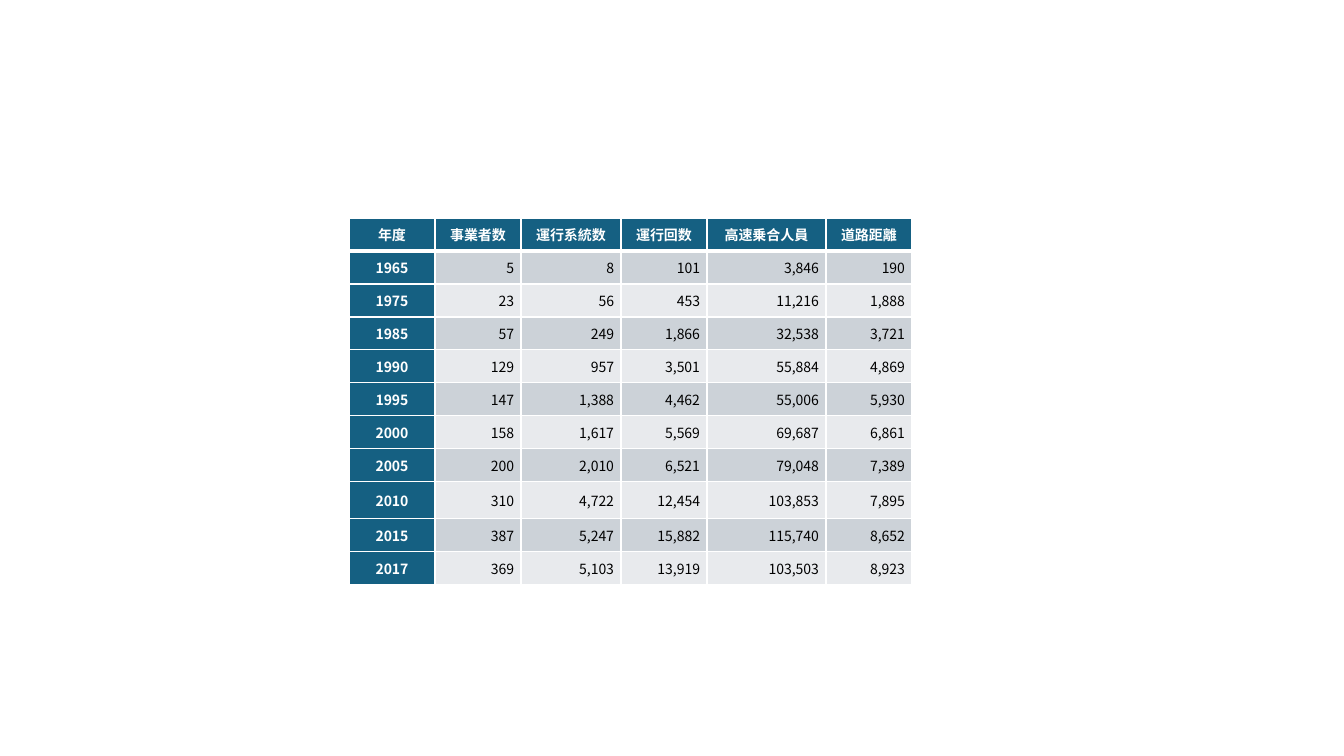
import dataclasses

import lxml.etree
import pptx
import pptx.dml.color
import pptx.enum.text
import pptx.oxml.ns
import pptx.util

EMU_PER_PX = 914400 / 100.8


@dataclasses.dataclass(frozen=True)
class Theme:
    font: str = "Noto Sans CJK JP"
    text_size: float = 10
    heading_fill: str = "156082"
    heading_text: str = "FFFFFF"
    body_text: str = "000000"
    bands: tuple = ("CCD2D8", "E8EAED")
    border: str = "FFFFFF"
    thin_line: float = 1
    thick_line: float = 3


THEME = Theme()

# Table geometry in px
TABLE_LEFT, TABLE_TOP = 349, 218
COLUMN_WIDTHS = [86, 86, 100, 86, 119, 86]
ROW_HEIGHT = 33
TALL_ROW_HEIGHT = 37
TALL_ROW_YEAR = "2010"
SIDE_MARGIN = 7

HEADINGS = ["年度", "事業者数", "運行系統数", "運行回数", "高速乗合人員", "道路距離"]
BUS_RECORDS = [
    (1965, 5, 8, 101, 3846, 190),
    (1975, 23, 56, 453, 11216, 1888),
    (1985, 57, 249, 1866, 32538, 3721),
    (1990, 129, 957, 3501, 55884, 4869),
    (1995, 147, 1388, 4462, 55006, 5930),
    (2000, 158, 1617, 5569, 69687, 6861),
    (2005, 200, 2010, 6521, 79048, 7389),
    (2010, 310, 4722, 12454, 103853, 7895),
    (2015, 387, 5247, 15882, 115740, 8652),
    (2017, 369, 5103, 13919, 103503, 8923),
]


def px(length):
    return pptx.util.Emu(round(length * EMU_PER_PX))


def rgb(value):
    return pptx.dml.color.RGBColor.from_string(value)


def add_border(cell, side, points):
    """Draw one edge of a cell; call before the cell is filled."""
    properties = cell._tc.get_or_add_tcPr()
    qn = pptx.oxml.ns.qn
    line = lxml.etree.SubElement(properties, qn(f"a:ln{side}"), w=str(pptx.util.Pt(points)))
    fill = lxml.etree.SubElement(line, qn("a:solidFill"))
    lxml.etree.SubElement(fill, qn("a:srgbClr"), val=THEME.border)


def format_run(run, color, bold):
    run.font.size = pptx.util.Pt(THEME.text_size)
    run.font.bold = bold
    run.font.color.rgb = rgb(color)
    run.font.name = THEME.font
    lxml.etree.SubElement(
        run.font._element, pptx.oxml.ns.qn("a:ea"), typeface=THEME.font
    )


def fill_cell(cell, text, row, column):
    is_heading = row == 0 or column == 0

    # Edges: a thick line separates the headings from the records
    top = THEME.thick_line if row == 1 else THEME.thin_line
    bottom = THEME.thick_line if row == 0 else THEME.thin_line
    for side, points in zip("LRTB", (THEME.thin_line, THEME.thin_line, top, bottom)):
        add_border(cell, side, points)

    # Background and margins
    cell.fill.solid()
    cell.fill.fore_color.rgb = rgb(
        THEME.heading_fill if is_heading else THEME.bands[(row - 1) % 2]
    )
    cell.margin_left = cell.margin_right = px(SIDE_MARGIN)
    cell.margin_top = cell.margin_bottom = 0
    cell.vertical_anchor = pptx.enum.text.MSO_ANCHOR.MIDDLE

    # Text
    para = cell.text_frame.paragraphs[0]
    para.text = text
    align = pptx.enum.text.PP_ALIGN
    para.alignment = align.CENTER if is_heading else align.RIGHT
    color = THEME.heading_text if is_heading else THEME.body_text
    format_run(para.runs[0], color, is_heading)


def add_bus_table(page):
    records = [[str(year)] + [f"{n:,}" for n in counts] for year, *counts in BUS_RECORDS]
    rows = [HEADINGS] + records
    heights = [TALL_ROW_HEIGHT if row[0] == TALL_ROW_YEAR else ROW_HEIGHT for row in rows]
    frame = page.shapes.add_table(
        len(rows), len(HEADINGS), px(TABLE_LEFT), px(TABLE_TOP),
        px(sum(COLUMN_WIDTHS)), px(sum(heights)),
    )
    table = frame.table
    table.first_col = True
    for column, width in zip(table.columns, COLUMN_WIDTHS):
        column.width = px(width)
    for r, (texts, height) in enumerate(zip(rows, heights)):
        table.rows[r].height = px(height)
        for c, text in enumerate(texts):
            fill_cell(table.cell(r, c), text, r, c)


def main():
    deck = pptx.Presentation()
    deck.slide_width, deck.slide_height = px(1344), px(756)
    page = deck.slides.add_slide(deck.slide_layouts[6])
    add_bus_table(page)
    deck.save("out.pptx")


if __name__ == "__main__":
    main()
